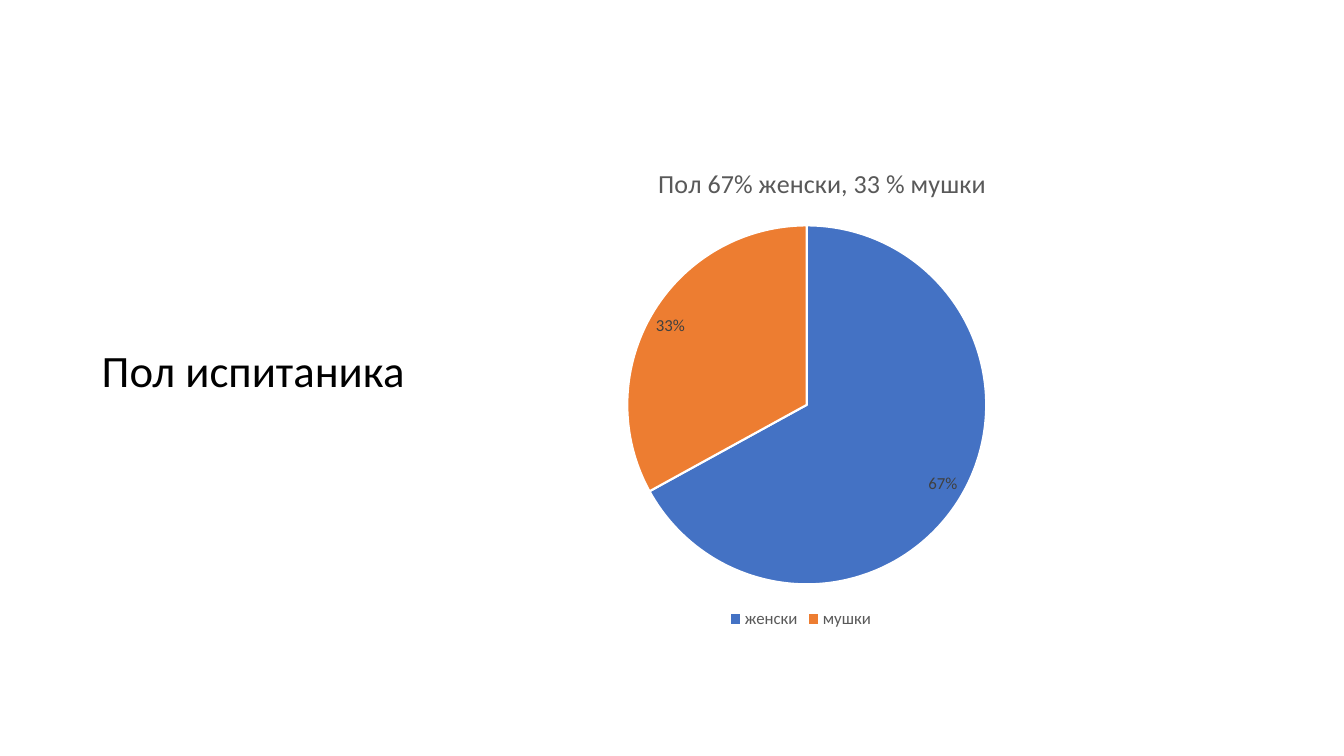
from lxml import etree
from pptx import Presentation
from pptx import util as u
from pptx.chart import data as chart_data
from pptx.dml.color import RGBColor
from pptx.enum import chart as kinds, text
from pptx.oxml.ns import qn

COLORS = {
    "black": "000000",
    "white": "FFFFFF",
    "label": "404040",
    "grey": "595959",
    "женски": "4472C4",
    "мушки": "ED7D31",
}
SHARES = {"женски": 0.67, "мушки": 0.33}


def set_layout(parent, before, **fractions):
    """Place a chart part, right after its child `before` or first if None."""
    for old in parent.findall(qn("c:layout")):
        parent.remove(old)
    layout = etree.Element(qn("c:layout"))
    manual = etree.SubElement(layout, qn("c:manualLayout"))
    if "w" in fractions:
        etree.SubElement(manual, qn("c:layoutTarget")).set("val", "inner")
    for axis in ("x", "y"):
        etree.SubElement(manual, qn(f"c:{axis}Mode")).set("val", "edge")
    for name, value in fractions.items():
        etree.SubElement(manual, qn(f"c:{name}")).set("val", str(value))
    if before is None:
        parent.insert(0, layout)
    else:
        parent.find(qn(before)).addnext(layout)


class SlideBuilder:
    def __init__(self, page, font_name):
        self.page = page
        self.font_name = font_name

    def style(self, font, size, color):
        font.name = self.font_name
        font.size = u.Pt(size)
        font.bold = False
        font.color.rgb = RGBColor.from_string(COLORS[color])

    def title(self, words, left, top, width, height):
        box = self.page.shapes.title
        box.left, box.top = u.Cm(left), u.Cm(top)
        box.width, box.height = u.Cm(width), u.Cm(height)
        frame = box.text_frame
        frame.text = words
        frame.word_wrap = True
        frame.auto_size = text.MSO_AUTO_SIZE.SHAPE_TO_FIT_TEXT
        frame.vertical_anchor = text.MSO_ANCHOR.TOP
        para = frame.paragraphs[0]
        para.alignment = text.PP_ALIGN.LEFT
        self.style(para.runs[0].font, 32, "black")

    def pie(self, heading, shares, left, top, width, height):
        values = chart_data.CategoryChartData(number_format="0%")
        values.categories = list(shares)
        values.add_series("Series 1", list(shares.values()))
        chart = self.page.shapes.add_chart(
            kinds.XL_CHART_TYPE.PIE, u.Cm(left), u.Cm(top),
            u.Cm(width), u.Cm(height), values).chart
        self.style(chart.font, 10, "black")

        chart.has_title = True
        chart.chart_title.include_in_layout = False
        para = chart.chart_title.text_frame.paragraphs[0]
        para.text = heading
        self.style(para.runs[0].font, 18.6, "grey")

        chart.has_legend = True
        chart.legend.position = kinds.XL_LEGEND_POSITION.BOTTOM
        chart.legend.include_in_layout = False
        self.style(chart.legend.font, 12, "grey")

        plot = chart.plots[0]
        plot.vary_by_categories = True
        for index, name in enumerate(shares):
            slice_format = plot.series[0].points[index].format
            slice_format.fill.solid()
            slice_format.fill.fore_color.rgb = RGBColor.from_string(COLORS[name])
            slice_format.line.color.rgb = RGBColor.from_string(COLORS["white"])
            slice_format.line.width = u.Pt(1.5)

        labels = plot.series[0].data_labels
        labels.show_value = True
        labels.number_format = "0%"
        labels.number_format_is_linked = False
        labels.position = kinds.XL_LABEL_POSITION.BEST_FIT
        self.style(labels.font, 12, "label")

        root = chart.element
        set_layout(root.find(".//" + qn("c:title")), "c:tx", x=0.31, y=0.09)
        set_layout(root.find(".//" + qn("c:plotArea")), None,
                   x=0.255, y=0.213, w=0.452, h=0.678)
        set_layout(root.find(".//" + qn("c:legend")), "c:legendPos", x=0.39, y=0.93)


def main():
    deck = Presentation()
    deck.slide_width, deck.slide_height = u.Cm(33.87), u.Cm(19.05)
    page = deck.slides.add_slide(deck.slide_layouts[5])
    builder = SlideBuilder(page, "Calibri")
    builder.pie("Пол 67% женски, 33 % мушки", SHARES, 9.47, 2.84, 22.58, 13.34)
    builder.title("Пол испитаника", 2.31, 8.51, 8.69, 1.63)
    deck.save("out.pptx")


if __name__ == "__main__":
    main()
